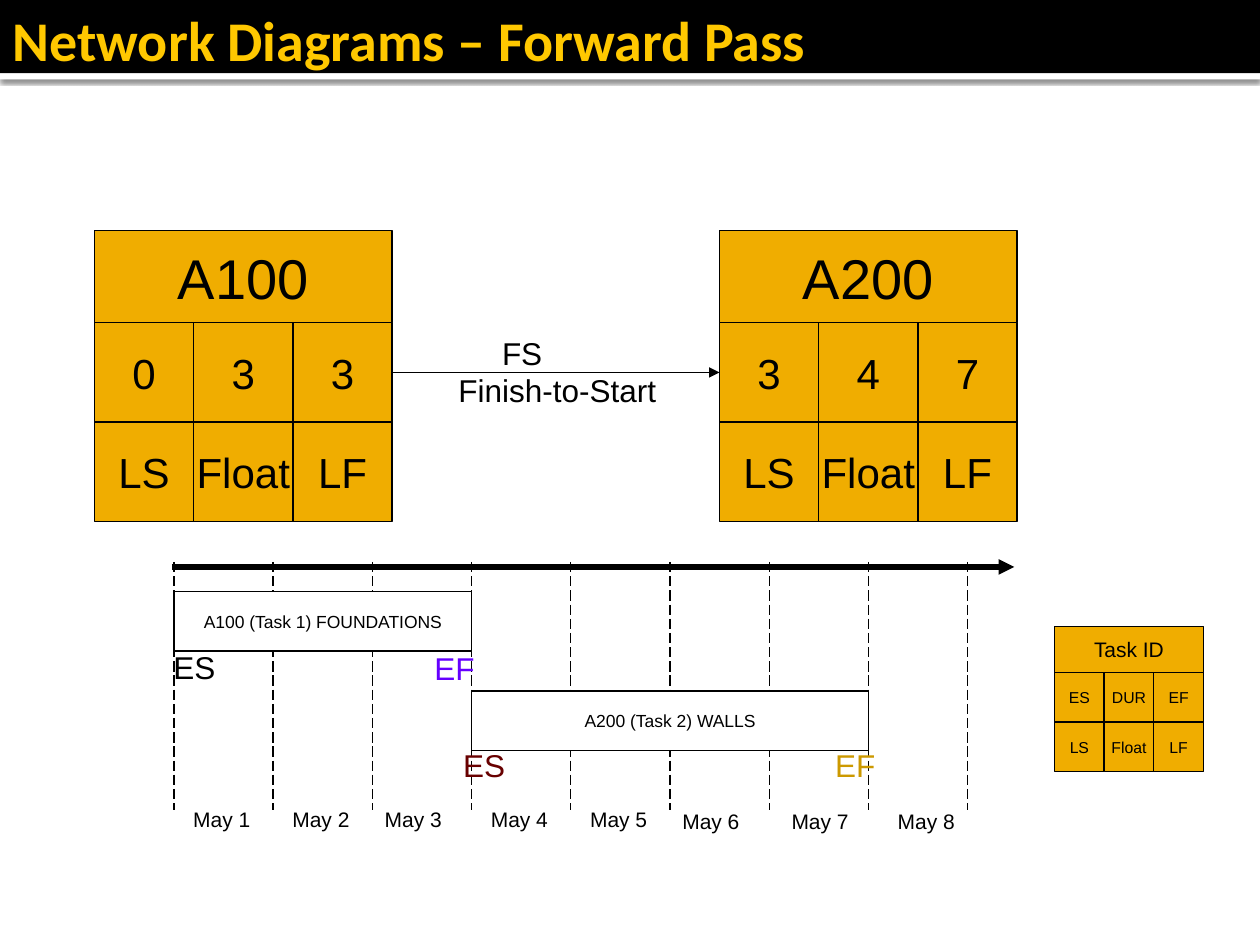
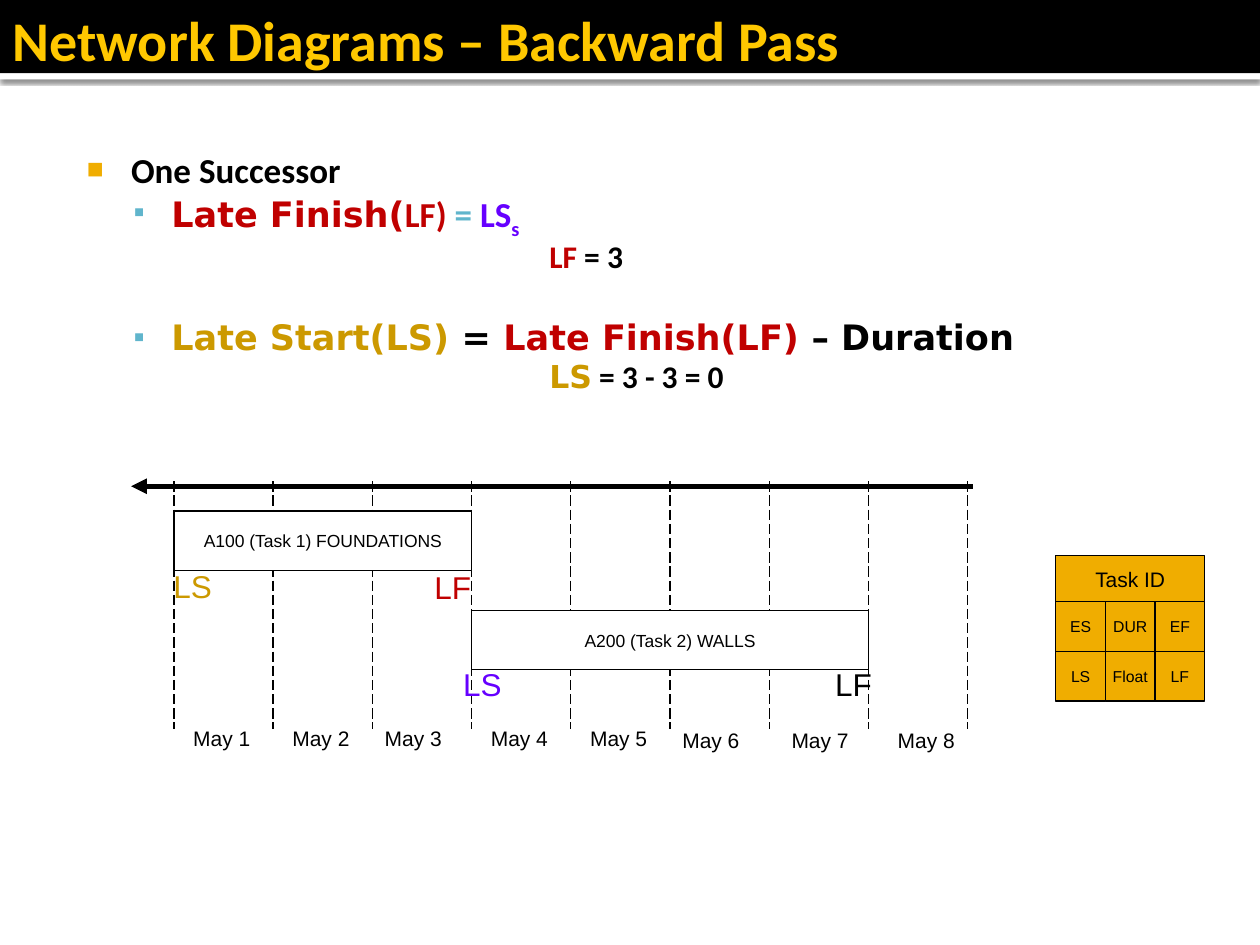
from dataclasses import dataclass
from typing import NamedTuple

from lxml.etree import SubElement
from pptx import Presentation
from pptx.dml.color import RGBColor
from pptx.enum.dml import MSO_LINE
from pptx.enum.shapes import MSO_CONNECTOR, MSO_SHAPE
from pptx.enum.text import MSO_ANCHOR, MSO_AUTO_SIZE, PP_ALIGN
from pptx.oxml.ns import qn
from pptx.util import Inches, Pt


@dataclass(frozen=True)
class Theme:
    black: str = "000000"
    white: str = "FFFFFF"
    amber: str = "F0AD00"
    title: str = "FFC800"
    red: str = "C00000"
    maroon: str = "680000"
    violet: str = "6600FF"
    ochre: str = "CC9900"
    teal: str = "60B5CC"
    diagram_font: str = "Arial"
    text_font: str = "Calibri"
    formula_font: str = "DejaVu Sans"
    title_size: float = 32
    body_size: float = 20
    result_size: float = 18
    mark_size: float = 18
    date_size: float = 12
    bar_size: float = 10
    thin: float = 0.75
    thick: float = 3


THEME = Theme()
SLIDE_WIDTH, SLIDE_HEIGHT = 10, 7.5
DAYS = 8
DAY = 6.3 / DAYS  # width of one day, also one cell of a task node
HEADER_ROWS = 0.93
TIMELINE_LEFT = 1.38
TIMELINE_ROWS = 2.5
DATE_COLUMNS = (0.07, 1.07, 2, 3.07, 4.07, 5, 6.1, 7.17)


@dataclass(frozen=True)
class Grid:
    """Square grid whose first cell starts at left, top (inches)."""
    left: float
    top: float
    unit: float = DAY

    def point(self, column: float, row: float) -> tuple:
        return Inches(self.left + column * self.unit), Inches(self.top + row * self.unit)

    def box(self, column: float, row: float, columns: float, rows: float) -> tuple:
        return *self.point(column, row), Inches(columns * self.unit), Inches(rows * self.unit)


class TaskNode(NamedTuple):
    grid: Grid
    task: str
    early: tuple
    task_size: float
    cell_size: float
    late: tuple = ("LS", "Float", "LF")


class Bar(NamedTuple):
    task: str
    first_day: float
    days: float
    row: float


class Mark(NamedTuple):
    text: str
    column: float
    row: float
    colour: str = THEME.black
    columns: float = 0.69


class Arrow(NamedTuple):
    start: float
    end: float
    head: str


class Span(NamedTuple):
    text: str
    colour: str = THEME.black
    font: str = THEME.text_font
    subscript: bool = False


class Point(NamedTuple):
    spans: tuple
    indent: float
    hanging: float = 0
    bullet: str = ""
    bullet_colour: str = THEME.teal
    bullet_percent: int = 90
    size: float = THEME.body_size
    space_before: float = 4


BARS = (
    Bar("A100 (Task 1) FOUNDATIONS", 0, 3, 0.3),
    Bar("A200 (Task 2) WALLS", 3, 4, 1.3),
)


def set_font(font, size: float, colour: str, name: str, bold: bool = False) -> None:
    font.size, font.name, font.bold = Pt(size), name, bold
    font.color.rgb = RGBColor.from_string(colour)


def add_box(shapes, place: tuple, fill: str, outline: bool = True):
    box = shapes.add_shape(MSO_SHAPE.RECTANGLE, *place)
    box.shadow.inherit = False
    box.fill.solid()
    box.fill.fore_color.rgb = RGBColor.from_string(fill)
    if outline:
        box.line.width = Pt(THEME.thin)
        box.line.color.rgb = RGBColor.from_string(THEME.black)
    else:
        box.line.fill.background()
    return box


def add_text_box(shapes, place: tuple, fill: str, text: str, size: float):
    box = add_box(shapes, place, fill)
    frame = box.text_frame
    frame.word_wrap = False
    frame.vertical_anchor = MSO_ANCHOR.MIDDLE
    frame.text = text
    frame.paragraphs[0].alignment = PP_ALIGN.CENTER
    set_font(frame.paragraphs[0].font, size, THEME.black, THEME.diagram_font)
    return box


def add_label(shapes, grid: Grid, mark: Mark, size: float = THEME.mark_size) -> None:
    label = shapes.add_textbox(*grid.box(mark.column, mark.row, mark.columns, size / 36))
    frame = label.text_frame
    frame.word_wrap = False
    frame.auto_size = MSO_AUTO_SIZE.SHAPE_TO_FIT_TEXT
    frame.text = mark.text
    set_font(frame.paragraphs[0].font, size, mark.colour, THEME.diagram_font)


def add_line(shapes, start: tuple, end: tuple, width: float = THEME.thin,
             head: str = "", dashed: bool = False):
    """head is the line end that carries a triangle: headEnd or tailEnd."""
    line = shapes.add_connector(MSO_CONNECTOR.STRAIGHT, *start, *end)
    line.line.width = Pt(width)
    line.line.color.rgb = RGBColor.from_string(THEME.black)
    if dashed:
        line.line.dash_style = MSO_LINE.LONG_DASH
    properties = line.element.spPr
    if head:
        SubElement(properties.find(qn("a:ln")), qn(f"a:{head}"), type="triangle")
    SubElement(properties, qn("a:effectLst"))
    return line


def add_task_node(shapes, node: TaskNode) -> tuple:
    """Return the first and last cells of the early row."""
    group = shapes.add_group_shape().shapes
    cells = {}
    for row, texts in ((1, node.late), (0, node.early)):
        for column, text in enumerate(texts):
            place = node.grid.box(column, HEADER_ROWS + row, 1, 1)
            cells[row, column] = add_text_box(group, place, THEME.amber, text, node.cell_size)
    add_text_box(group, node.grid.box(0, 0, 3, HEADER_ROWS), THEME.amber,
                 node.task, node.task_size)
    return cells[0, 0], cells[0, 2]


def add_legend(shapes, left: float, top: float) -> None:
    add_task_node(shapes, TaskNode(Grid(left, top, DAY / 2), "Task ID",
                                   ("ES", "DUR", "EF"), 12, 9))


def add_timeline(shapes, top: float, marks: tuple, arrow: Arrow) -> None:
    grid = Grid(TIMELINE_LEFT, top)
    for day in range(DAYS + 1):
        add_line(shapes, grid.point(day, 0), grid.point(day, TIMELINE_ROWS), dashed=True)
    for bar in BARS:
        add_text_box(shapes, grid.box(bar.first_day, bar.row, bar.days, 0.6),
                     THEME.white, bar.task, THEME.bar_size)
    for day, column in enumerate(DATE_COLUMNS, start=1):
        row = 2.4 if day < 6 else 2.42
        add_label(shapes, grid, Mark(f"May {day}", column, row, columns=0.85), THEME.date_size)
    for mark in marks:
        add_label(shapes, grid, mark)
    add_line(shapes, grid.point(arrow.start, 0.05), grid.point(arrow.end, 0.05),
             THEME.thick, arrow.head)


def add_master_bands(presentation, slide) -> None:
    """Draw the title bands on the slide, then move them behind the master's placeholders."""
    rule = add_box(slide.shapes, Grid(0, 0, 1).box(0, 0.58, SLIDE_WIDTH, 0.05), THEME.white, False)
    band = add_box(slide.shapes, Grid(0, 0, 1).box(0, 0, SLIDE_WIDTH, 0.58), THEME.black, False)
    shadow = SubElement(rule.element.spPr.find(qn("a:effectLst")), qn("a:outerShdw"),
                        blurRad=str(Pt(2.5)), dist=str(Pt(0.8)), dir="5400000", rotWithShape="0")
    colour = SubElement(shadow, qn("a:srgbClr"), val=THEME.black)
    SubElement(colour, qn("a:alpha"), val="60000")
    tree = presentation.slide_master.element.cSld.spTree
    for index, shape in enumerate((rule, band)):
        shape.element.nvSpPr.cNvPr.id = 101 + index
        tree.insert(2 + index, shape.element)


def place_placeholder(placeholder, place: tuple, insets: tuple, anchor):
    placeholder.left, placeholder.top, placeholder.width, placeholder.height = place
    frame = placeholder.text_frame
    frame.auto_size = MSO_AUTO_SIZE.NONE
    frame.word_wrap = True
    frame.vertical_anchor = anchor
    frame.margin_left, frame.margin_top, frame.margin_right, frame.margin_bottom = map(Inches, insets)
    return frame


def set_title(slide, text: str) -> None:
    frame = place_placeholder(slide.shapes.title, Grid(0, 0, 1).box(0, 0, SLIDE_WIDTH, 0.62),
                              (0.1, 0.05, 0.05, 0.05), MSO_ANCHOR.MIDDLE)
    frame.text = text
    frame.paragraphs[0].alignment = PP_ALIGN.LEFT
    set_font(frame.paragraphs[0].font, THEME.title_size, THEME.title, THEME.text_font, True)


def set_bullet(paragraph, point: Point) -> None:
    properties = paragraph._p.get_or_add_pPr()
    properties.set("marL", str(Inches(point.indent)))
    properties.set("indent", str(Inches(-point.hanging)))
    if not point.bullet:
        SubElement(properties, qn("a:buNone"))
        return
    colour = SubElement(properties, qn("a:buClr"))
    SubElement(colour, qn("a:srgbClr"), val=point.bullet_colour)
    SubElement(properties, qn("a:buSzPct"), val=str(point.bullet_percent * 1000))
    SubElement(properties, qn("a:buChar"), char=point.bullet)


def fill_body(frame, points: tuple) -> None:
    for index, point in enumerate(points):
        paragraph = frame.add_paragraph() if index else frame.paragraphs[0]
        paragraph.level = 1 if index else 0
        set_bullet(paragraph, point)
        paragraph.line_spacing = 0.8
        paragraph.space_before = Pt(point.space_before)
        for span in point.spans:
            run = paragraph.add_run()
            run.text = span.text
            set_font(run.font, point.size, span.colour, span.font, True)
            if span.subscript:
                run.font._element.set("baseline", "-25000")


def build_forward_pass(slide) -> None:
    shapes = slide.shapes
    set_title(slide, "Network Diagrams – Forward Pass")
    _, foundations_finish = add_task_node(
        shapes, TaskNode(Grid(0.75, 1.83), "A100", ("0", "3", "3"), 32, 24))
    walls_start, _ = add_task_node(
        shapes, TaskNode(Grid(5.71, 1.83), "A200", ("3", "4", "7"), 32, 24))
    link = add_line(shapes, (0, 0), (0, 0), head="tailEnd")
    link.begin_connect(foundations_finish, 3)
    link.end_connect(walls_start, 1)
    link_grid = Grid(3.54, 2.6)
    add_label(shapes, link_grid, Mark("FS", 0.44, 0))
    add_label(shapes, link_grid, Mark("Finish-to-Start", 0, 0.38, columns=2.27))
    add_legend(shapes, 8.37, 4.97)
    add_timeline(shapes, 4.46, (
        Mark("ES", -0.13, 0.8), Mark("EF", 2.5, 0.81, THEME.violet),
        Mark("ES", 2.79, 1.79, THEME.maroon), Mark("EF", 6.54, 1.79, THEME.ochre),
    ), Arrow(-0.02, 8.47, "tailEnd"))


def build_backward_pass(slide) -> None:
    set_title(slide, "Network Diagrams – Backward Pass")
    body = place_placeholder(slide.placeholders[1], Grid(0.5, 1.14, 1).box(0, 0, 9, 5.86),
                             (0.06, 0.1, 0.1, 0.05), MSO_ANCHOR.TOP)
    formula = THEME.formula_font
    fill_body(body, (
        Point((Span("One Successor"),), 0.48, 0.35, "■", THEME.amber, 80, space_before=0),
        Point((Span("Late Finish(", THEME.red, formula), Span("LF) ", THEME.red),
               Span("=", THEME.teal), Span(" LS", THEME.violet),
               Span("s", THEME.violet, subscript=True)), 0.8, 0.3, "▪"),
        Point((Span("LF", THEME.red), Span(" = 3")), 3.8, size=THEME.result_size, space_before=5.5),
        Point((Span("Late Start(LS)", THEME.ochre, formula), Span(" = ", font=formula),
               Span("Late Finish(LF) ", THEME.red, formula),
               Span("– Duration", font=formula)), 0.8, 0.3, "▪", space_before=28),
        Point((Span("LS", THEME.ochre, formula), Span(" = 3 - 3 = 0")), 3.8,
              size=THEME.result_size),
    ))
    add_legend(slide.shapes, 8.38, 4.41)
    add_timeline(slide.shapes, 3.82, (
        Mark("LS", -0.13, 0.8, THEME.ochre), Mark("LF", 2.5, 0.81, THEME.red),
        Mark("LS", 2.79, 1.79, THEME.violet), Mark("LF", 6.54, 1.79),
    ), Arrow(-0.43, 8.05, "headEnd"))


def main() -> None:
    presentation = Presentation()
    presentation.slide_width, presentation.slide_height = Inches(SLIDE_WIDTH), Inches(SLIDE_HEIGHT)
    title_only, title_and_body = presentation.slide_layouts[5], presentation.slide_layouts[1]
    forward = presentation.slides.add_slide(title_only)
    add_master_bands(presentation, forward)
    build_forward_pass(forward)
    build_backward_pass(presentation.slides.add_slide(title_and_body))
    presentation.save("out.pptx")


if __name__ == "__main__":
    main()
